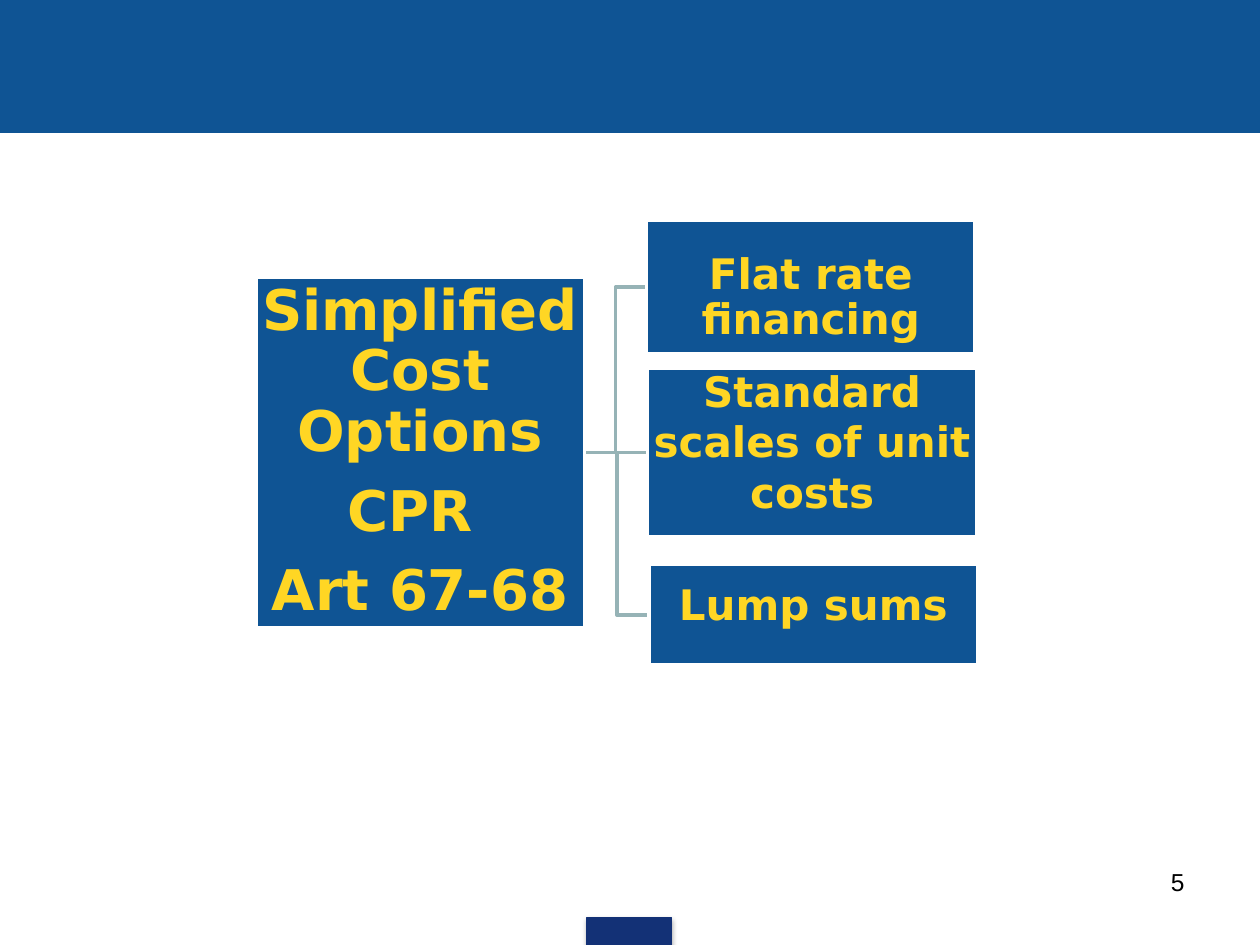
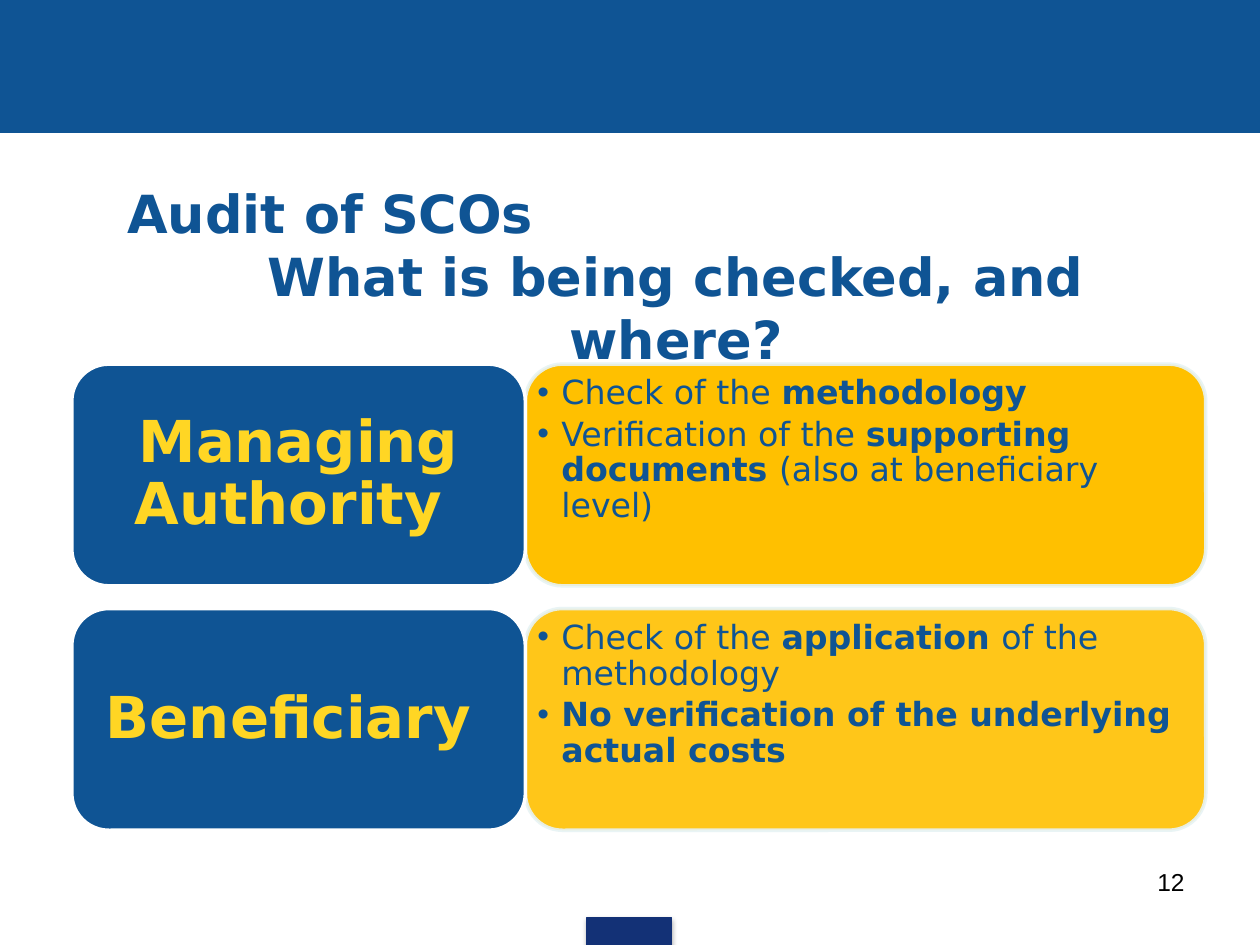
from dataclasses import dataclass

from lxml.etree import SubElement
from pptx import Presentation
from pptx.dml.color import RGBColor
from pptx.enum.shapes import MSO_CONNECTOR, MSO_SHAPE
from pptx.enum.text import MSO_ANCHOR, MSO_AUTO_SIZE, PP_ALIGN
from pptx.oxml.ns import qn
from pptx.util import Inches, Pt


@dataclass(frozen=True)
class Theme:
    blue: str = "0F5494"
    navy: str = "133176"
    yellow: str = "FFD624"
    amber: str = "FFC000"
    pale: str = "E7F3F4"
    branch: str = "96B3B6"
    white: str = "FFFFFF"
    black: str = "000000"
    font: str = "DejaVu Sans"
    number_font: str = "Arial"
    title_size: int = 30
    root_size: int = 32
    option_size: int = 24
    body_size: int = 33
    check_size: int = 19
    number_size: int = 14


def set_alpha(fill, percent):
    color = fill._xPr.find(qn("a:solidFill"))[0]
    SubElement(color, qn("a:alpha"), val=str(percent * 1000))


def write(frame, text, *, size, color, font=Theme.font, bold=False,
          align=PP_ALIGN.CENTER, spacing=None, after=0, margin=0, hanging=0):
    paragraph = frame.paragraphs[0]
    if paragraph.runs:
        paragraph = frame.add_paragraph()
    properties = paragraph._p.get_or_add_pPr()
    properties.set("marL", str(Inches(margin)))
    properties.set("indent", str(-Inches(hanging)))
    if hanging:
        SubElement(properties, qn("a:buFont"), typeface="Arial")
        SubElement(properties, qn("a:buChar"), char="•")
    paragraph.alignment = align
    paragraph.line_spacing = spacing
    paragraph.space_after = Pt(after)
    for index, part in enumerate(text.split("**")):
        if part:
            run = paragraph.add_run()
            run.text = part
            run.font.name = font
            run.font.size = Pt(size)
            run.font.bold = bold or index % 2 == 1
            run.font.color.rgb = RGBColor.from_string(color)


class Deck:
    def __init__(self, theme):
        self.theme = theme
        self.presentation = Presentation()
        self.presentation.slide_width = Inches(10)
        self.presentation.slide_height = Inches(7.5)
        self.slide = None

    def start(self, number, titled=False):
        theme = self.theme
        layout = self.presentation.slide_layouts[5 if titled else 6]
        self.slide = self.presentation.slides.add_slide(layout)
        self.box(0, 0, 10, 1.05, line=theme.blue, width=0.75)
        tab = self.box(4.66, 7.28, 0.67, 0.22, fill=theme.navy,
                       line=theme.navy, width=0.75)
        effects = tab._element.spPr.find(qn("a:effectLst"))
        shadow = SubElement(effects, qn("a:outerShdw"), blurRad=str(Pt(3.1)),
                            dist=str(Pt(1.8)), dir="5400000", rotWithShape="0")
        tone = SubElement(shadow, qn("a:srgbClr"), val=theme.black)
        SubElement(tone, qn("a:alpha"), val="35000")
        page = self.slide.shapes.add_textbox(
            Inches(7.17), Inches(6.83), Inches(2.33), Inches(0.52))
        page.text_frame.word_wrap = True
        write(page.text_frame, str(number), size=theme.number_size,
              color=theme.black, font=theme.number_font, align=PP_ALIGN.RIGHT)

    def title(self, topic, question):
        heading = self.slide.shapes.title
        heading.left, heading.top = Inches(0.52), Inches(1.68)
        heading.width, heading.height = Inches(9), Inches(1.02)
        frame = heading.text_frame
        frame.auto_size = MSO_AUTO_SIZE.NONE
        frame.vertical_anchor = MSO_ANCHOR.MIDDLE
        look = dict(size=self.theme.title_size, color=self.theme.blue, bold=True)
        write(frame, topic, align=PP_ALIGN.LEFT, margin=0.39, **look)
        write(frame, question, margin=0.69, **look)

    def box(self, left, top, width_in, height, *, fill=Theme.blue,
            line=Theme.white, width=2, kind=MSO_SHAPE.RECTANGLE,
            insets=(0.02, 0.02, 0.02, 0.02), anchor=MSO_ANCHOR.MIDDLE):
        shape = self.slide.shapes.add_shape(
            kind, Inches(left), Inches(top), Inches(width_in), Inches(height))
        shape.shadow.inherit = False
        shape.fill.solid()
        shape.fill.fore_color.rgb = RGBColor.from_string(fill)
        shape.line.color.rgb = RGBColor.from_string(line)
        shape.line.width = Pt(width)
        frame = shape.text_frame
        frame.word_wrap = True
        frame.vertical_anchor = anchor
        (frame.margin_left, frame.margin_top,
         frame.margin_right, frame.margin_bottom) = map(Inches, insets)
        return shape

    def branch(self, root, option, kind):
        link = self.slide.shapes.add_connector(kind, 0, 0, 0, 0)
        link.begin_connect(root, 3)
        link.end_connect(option, 1)
        link.line.color.rgb = RGBColor.from_string(self.theme.branch)
        link.line.width = Pt(2)
        SubElement(link._element.spPr, qn("a:effectLst"))
        root._element.addprevious(link._element)

    def audit_row(self, top, body, checks, opacity):
        theme = self.theme
        rounded = MSO_SHAPE.ROUNDED_RECTANGLE
        panel = self.box(4.17, top, 5.4, 1.76, fill=theme.amber,
                         line=theme.pale, kind=rounded,
                         insets=(0.01, 0.01, 0.01, 0.01), anchor=MSO_ANCHOR.TOP)
        set_alpha(panel.fill, opacity)
        set_alpha(panel.line.fill, 90)
        for check in checks:
            write(panel.text_frame, check, size=theme.check_size,
                  color=theme.blue, align=PP_ALIGN.LEFT, spacing=0.9,
                  after=3, margin=0.19, hanging=0.19)
        owner = self.box(0.57, top, 3.6, 1.76, kind=rounded,
                         insets=(0.14, 0.07, 0.14, 0.07))
        write(owner.text_frame, body, size=theme.body_size,
              color=theme.yellow, bold=True, spacing=0.9)


def build_options(deck):
    theme = deck.theme
    deck.start(5)
    root = deck.box(2.03, 2.2, 2.61, 2.78)
    for text in ("Simplified Cost Options", "CPR ", "Art 67-68"):
        write(root.text_frame, text, size=theme.root_size,
              color=theme.yellow, bold=True, spacing=0.9, after=11)
    lowered, raised = (0.02, 0.2, 0.02, 0.02), (0.02, 0.02, 0.02, 0.2)
    elbow, straight = MSO_CONNECTOR.ELBOW, MSO_CONNECTOR.STRAIGHT
    options = (
        ("Flat rate financing", 5.13, 1.75, 1.06, lowered, 0.9, elbow),
        ("Standard scales of unit costs", 5.14, 2.92, 1.34, raised, 1.0, straight),
        ("Lump sums", 5.15, 4.48, 0.8, raised, 1.0, elbow),
    )
    for text, left, top, height, insets, spacing, kind in options:
        option = deck.box(left, top, 2.61, height, insets=insets)
        write(option.text_frame, text, size=theme.option_size,
              color=theme.yellow, bold=True, spacing=spacing)
        deck.branch(root, option, kind)


def build_audit(deck):
    deck.start(12, titled=True)
    deck.title("Audit of SCOs", "What is being checked, and where?")
    rows = (
        ("Managing Authority ", 100, (
            "Check of the **methodology**",
            "Verification of the **supporting documents **"
            "(also at beneficiary level)")),
        ("Beneficiary ", 90, (
            "Check of the **application **of the methodology",
            "**No verification of the underlying actual costs**")),
    )
    for index, (body, opacity, checks) in enumerate(rows):
        deck.audit_row(2.89 + 1.94 * index, body, checks, opacity)


def main():
    deck = Deck(Theme())
    build_options(deck)
    build_audit(deck)
    deck.presentation.save("out.pptx")


if __name__ == "__main__":
    main()
